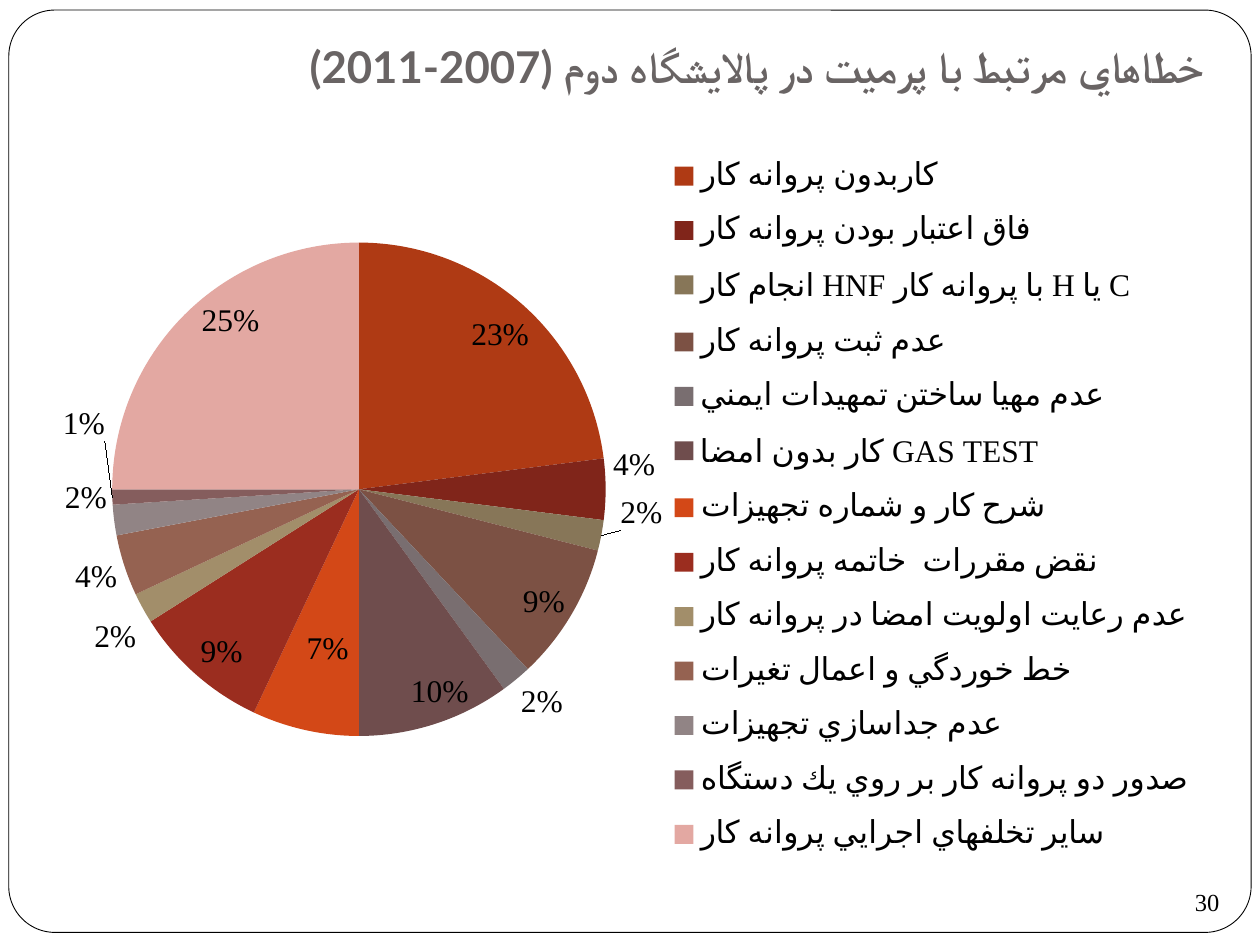
from dataclasses import dataclass

from lxml import etree
from pptx import Presentation
from pptx.chart.data import CategoryChartData
from pptx.dml.color import RGBColor
from pptx.enum import chart as charts, shapes, text
from pptx.oxml import parse_xml
from pptx.oxml.ns import nsdecls, qn
from pptx.util import Inches, Pt


@dataclass
class Theme:
    """Colours, fonts and type sizes of the slide."""
    paper: str = "FFFFFF"
    ink: str = "000000"
    heading: str = "696464"
    heading_font: str = "Lato"
    body_font: str = "Times New Roman"
    heading_size: int = 25
    chart_size: int = 18
    number_size: int = 14


def style_font(font, name, size, color, bold=False):
    """Set the typeface, size, colour and weight of a font."""
    font.name, font.size, font.bold = name, Pt(size), bold
    font.color.rgb = RGBColor.from_string(color)


def manual_layout(x, y, **parts):
    """Return a chart layout element from fractions of the chart area."""
    values = {**parts, "x": x, "y": y}
    order = ("layoutTarget", "xMode", "yMode", "x", "y", "w", "h")
    children = "".join(f'<c:{key} val="{values[key]}"/>' for key in order if key in values)
    return parse_xml(f'<c:layout {nsdecls("c")}><c:manualLayout>{children}</c:manualLayout></c:layout>')


theme = Theme()
inside = charts.XL_LABEL_POSITION.INSIDE_END
outside = charts.XL_LABEL_POSITION.OUTSIDE_END

# Category, percentage, slice colour, label position
violations = [
    ("كاربدون پروانه كار", 23, "AF3A14", inside),
    ("فاق اعتبار بودن پروانه كار", 4, "80251A", outside),
    ("انجام كار HNF با پروانه كار H يا C", 2, "877658", outside),
    ("عدم ثبت پروانه كار", 9, "7C5144", inside),
    ("عدم مهيا ساختن تمهيدات ايمني", 2, "796E70", outside),
    ("كار بدون امضا GAS TEST", 10, "6F4D4D", inside),
    ("شرح كار و شماره تجهيزات", 7, "D34817", inside),
    ("نقض مقررات  خاتمه پروانه كار", 9, "9B2D1F", inside),
    ("عدم رعايت اولويت امضا در پروانه كار", 2, "A28E6A", outside),
    ("خط خوردگي و اعمال تغيرات ", 4, "956251", outside),
    ("عدم جداسازي تجهيزات", 2, "918485", outside),
    ("صدور دو پروانه كار بر روي يك دستگاه", 1, "855D5D", outside),
    ("ساير تخلفهاي اجرايي پروانه كار", 25, "E3A8A2", inside),
]
# Labels moved from their standard places, by slice index
label_shifts = {0: (0.01, 0.01), 1: (0, -0.03), 2: (0.01, -0.05), 3: (0, 0.01),
                5: (0.03, -0.01), 6: (0, -0.07), 8: (0, 0.01), 9: (0, -0.01),
                10: (0, -0.05), 11: (0, -0.09), 12: (0.01, -0.02)}

presentation = Presentation()
presentation.slide_width, presentation.slide_height = Inches(10), Inches(7.5)
slide = presentation.slides.add_slide(presentation.slide_layouts[5])

# Frame, placed behind the title
frame = slide.shapes.add_shape(shapes.MSO_SHAPE.ROUNDED_RECTANGLE,
                               Inches(0.07), Inches(0.08), Inches(9.86), Inches(7.32))
frame.adjustments[0] = 0.05
frame.shadow.inherit = False
frame.fill.solid()
frame.fill.fore_color.rgb = RGBColor.from_string(theme.paper)
frame.line.color.rgb = RGBColor.from_string(theme.ink)
frame.line.width = Pt(0.5)
title = slide.shapes.title
title._element.addprevious(frame._element)

# Title, with the heading font also set for Persian script
title.left, title.top, title.width, title.height = Inches(0), Inches(0), Inches(9.66), Inches(0.83)
title_frame = title.text_frame
title_frame.text = "خطاهاي مرتبط با پرميت در پالايشگاه دوم (2007-2011)"
title_frame.auto_size = text.MSO_AUTO_SIZE.NONE
title_frame.vertical_anchor = text.MSO_ANCHOR.BOTTOM
title_frame.margin_bottom = Inches(0.1)
heading = title_frame.paragraphs[0]
heading.alignment = text.PP_ALIGN.RIGHT
heading._p.get_or_add_pPr().set("rtl", "1")
heading_run = heading.runs[0]
style_font(heading_run.font, theme.heading_font, theme.heading_size, theme.heading, True)
etree.SubElement(heading_run._r.get_or_add_rPr(), qn("a:cs")).set("typeface", theme.heading_font)

# Pie chart
chart_data = CategoryChartData()
chart_data.categories = [category for category, *_ in violations]
chart_data.add_series("Series 1", [value for _, value, *_ in violations])
chart = slide.shapes.add_chart(charts.XL_CHART_TYPE.PIE, Inches(0.15), Inches(0.77),
                               Inches(9.47), Inches(6.42), chart_data).chart
style_font(chart.font, theme.body_font, theme.chart_size, theme.ink)
chart.has_title = False
chart.plots[0].vary_by_categories = True

series = chart.plots[0].series[0]
labels = series.data_labels
labels.number_format, labels.number_format_is_linked = "0%", False
labels.show_percentage, labels.show_value = True, False
for index, (_, _, color, position) in enumerate(violations):
    point = series.points[index]
    point.format.fill.solid()
    point.format.fill.fore_color.rgb = RGBColor.from_string(color)
    point.data_label.position = position

for index, label in enumerate(chart.element.xpath(".//c:dLbl")):
    label.find(qn("c:showVal")).set("val", "0")
    label.find(qn("c:showPercent")).set("val", "1")
    if index in label_shifts:
        label.find(qn("c:idx")).addnext(manual_layout(*label_shifts[index]))

# Plot and legend places
plot_area = chart.element.xpath(".//c:plotArea")[0]
for layout in plot_area.findall(qn("c:layout")):
    plot_area.remove(layout)
plot_area.insert(0, manual_layout(0.06, 0.18, w=0.45, h=0.61, layoutTarget="inner",
                                  xMode="edge", yMode="edge"))
chart.has_legend = True
legend = chart.legend
legend.position = charts.XL_LEGEND_POSITION.RIGHT
legend.include_in_layout = False
style_font(legend.font, theme.body_font, theme.chart_size, theme.ink)
legend_element = chart.element.xpath(".//c:legend")[0]
for layout in legend_element.findall(qn("c:layout")):
    legend_element.remove(layout)
legend_element.find(qn("c:legendPos")).addnext(
    manual_layout(0.54, 0.05, w=0.45, h=0.91, xMode="edge", yMode="edge"))

# Slide number
number = slide.shapes.add_textbox(Inches(9.33), Inches(6.92), Inches(0.5), Inches(0.48))
number_frame = number.text_frame
number_frame.text = "30"
number_frame.word_wrap = True
number_frame.vertical_anchor = text.MSO_ANCHOR.MIDDLE
number_frame.margin_left = number_frame.margin_right = Inches(0.05)
number_frame.paragraphs[0].alignment = text.PP_ALIGN.CENTER
style_font(number_frame.paragraphs[0].runs[0].font, theme.body_font, theme.number_size, theme.ink)

presentation.save("out.pptx")
